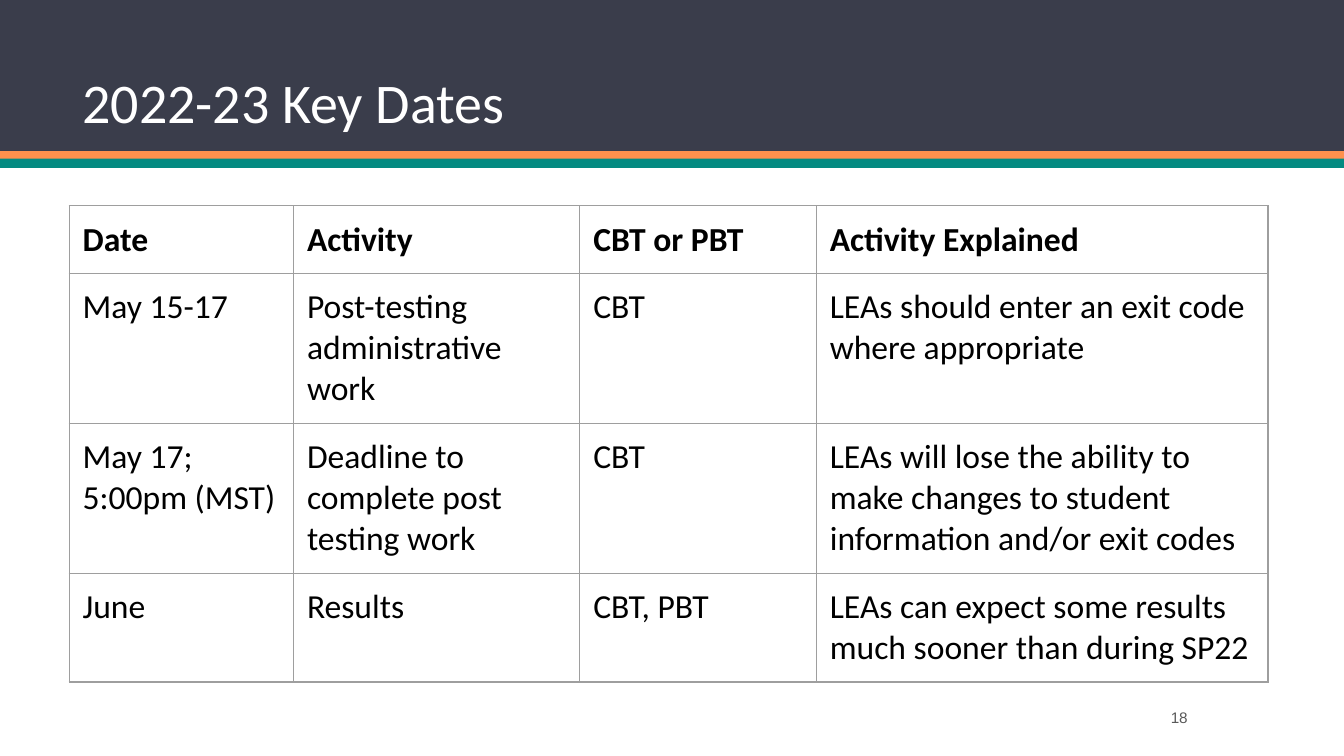
from dataclasses import dataclass

from lxml.etree import SubElement
from pptx import Presentation
from pptx.dml.color import RGBColor
from pptx.enum.shapes import MSO_SHAPE
from pptx.enum.text import MSO_ANCHOR, PP_ALIGN
from pptx.oxml.ns import qn
from pptx.slide import Slide
from pptx.table import _Cell
from pptx.text.text import _Paragraph
from pptx.util import Emu, Pt

EMU_PER_PX = 4572
SLIDE_WIDTH, SLIDE_HEIGHT = 2000, 1125
CELL_MARGIN = 20
BORDER_WIDTH = Pt(0.75)

NAVY = RGBColor(0x3A, 0x3D, 0x4B)
ORANGE = RGBColor(0xFF, 0x91, 0x4D)
TEAL = RGBColor(0x04, 0x8A, 0x81)
WHITE = RGBColor(0xFF, 0xFF, 0xFF)
BLACK = RGBColor(0x00, 0x00, 0x00)
GRAY = RGBColor(0x59, 0x59, 0x59)
BORDER_GRAY = RGBColor(0x9E, 0x9E, 0x9E)


@dataclass(frozen=True)
class Box:
    left: int
    top: int
    width: int
    height: int


@dataclass(frozen=True)
class Band:
    top: int
    height: int
    color: RGBColor


@dataclass(frozen=True)
class TextStyle:
    font: str
    size: float
    color: RGBColor
    bold: bool = False


@dataclass(frozen=True)
class Label:
    text: str
    box: Box
    style: TextStyle
    anchor: MSO_ANCHOR
    alignment: PP_ALIGN
    line_spacing: float


BANDS = [Band(0, 225, NAVY), Band(225, 14, ORANGE), Band(236, 14, TEAL)]
LABELS = [
    Label("2022-23 Key Dates", Box(103, 42, 1684, 170), TextStyle("Calibri", 30, WHITE),
          MSO_ANCHOR.BOTTOM, PP_ALIGN.LEFT, 0.9),
    Label("18", Box(1563, 1045, 224, 46), TextStyle("Arial", 8.2, GRAY),
          MSO_ANCHOR.MIDDLE, PP_ALIGN.RIGHT, 1.0),
]
HEADER_STYLE = TextStyle("Calibri", 18, BLACK, bold=True)
BODY_STYLE = TextStyle("Calibri", 18, BLACK)
TABLE_LEFT, TABLE_TOP = 103, 306
COLUMN_WIDTHS = [334, 426, 352, 672]
ROW_HEIGHTS = [101, 223, 223, 162]
KEY_DATES = [
    ["Date", "Activity", "CBT or PBT", "Activity Explained"],
    ["May 15-17", "Post-testing administrative work", "CBT",
     "LEAs should enter an exit code where appropriate"],
    ["May 17; 5:00pm (MST)", "Deadline to complete post testing work", "CBT",
     "LEAs will lose the ability to make changes to student information and/or exit codes"],
    ["June", "Results", "CBT, PBT",
     "LEAs can expect some results much sooner than during SP22"],
]


def px(length: int) -> Emu:
    return Emu(length * EMU_PER_PX)


def place(box: Box) -> tuple[Emu, Emu, Emu, Emu]:
    return px(box.left), px(box.top), px(box.width), px(box.height)


def add_run(paragraph: _Paragraph, text: str, style: TextStyle) -> None:
    run = paragraph.add_run()
    run.text = text
    run.font.name = style.font
    run.font.size = Pt(style.size)
    run.font.bold = style.bold
    run.font.color.rgb = style.color


def draw_band(slide: Slide, band: Band) -> None:
    box = Box(0, band.top, SLIDE_WIDTH, band.height)
    shape = slide.shapes.add_shape(MSO_SHAPE.RECTANGLE, *place(box))
    shape.shadow.inherit = False
    shape.fill.solid()
    shape.fill.fore_color.rgb = band.color
    shape.line.fill.background()


def draw_label(slide: Slide, label: Label) -> None:
    text_frame = slide.shapes.add_textbox(*place(label.box)).text_frame
    text_frame.word_wrap = True
    text_frame.vertical_anchor = label.anchor
    paragraph = text_frame.paragraphs[0]
    paragraph.alignment = label.alignment
    paragraph.line_spacing = label.line_spacing
    add_run(paragraph, label.text, label.style)


def add_borders(cell: _Cell) -> None:
    properties = cell._tc.get_or_add_tcPr()
    for position, side in enumerate(("a:lnL", "a:lnR", "a:lnT", "a:lnB")):
        border = SubElement(properties, qn(side), w=str(BORDER_WIDTH))
        fill = SubElement(border, qn("a:solidFill"))
        SubElement(fill, qn("a:srgbClr"), val=str(BORDER_GRAY))
        properties.insert(position, border)


def fill_cell(cell: _Cell, text: str, style: TextStyle) -> None:
    cell.margin_left = cell.margin_right = px(CELL_MARGIN)
    cell.margin_top = cell.margin_bottom = px(CELL_MARGIN)
    cell.fill.background()
    add_borders(cell)
    add_run(cell.text_frame.paragraphs[0], text, style)


def draw_table(slide: Slide) -> None:
    box = Box(TABLE_LEFT, TABLE_TOP, sum(COLUMN_WIDTHS), sum(ROW_HEIGHTS))
    table = slide.shapes.add_table(len(ROW_HEIGHTS), len(COLUMN_WIDTHS), *place(box)).table
    table.horz_banding = False
    for column, width in zip(table.columns, COLUMN_WIDTHS):
        column.width = px(width)
    for row_index, (row, height, texts) in enumerate(zip(table.rows, ROW_HEIGHTS, KEY_DATES)):
        row.height = px(height)
        style = HEADER_STYLE if row_index == 0 else BODY_STYLE
        for cell, text in zip(row.cells, texts):
            fill_cell(cell, text, style)


def main() -> None:
    presentation = Presentation()
    presentation.slide_width = px(SLIDE_WIDTH)
    presentation.slide_height = px(SLIDE_HEIGHT)
    slide = presentation.slides.add_slide(presentation.slide_layouts[6])
    for band in BANDS:
        draw_band(slide, band)
    for label in LABELS:
        draw_label(slide, label)
    draw_table(slide)
    presentation.save("out.pptx")


if __name__ == "__main__":
    main()
